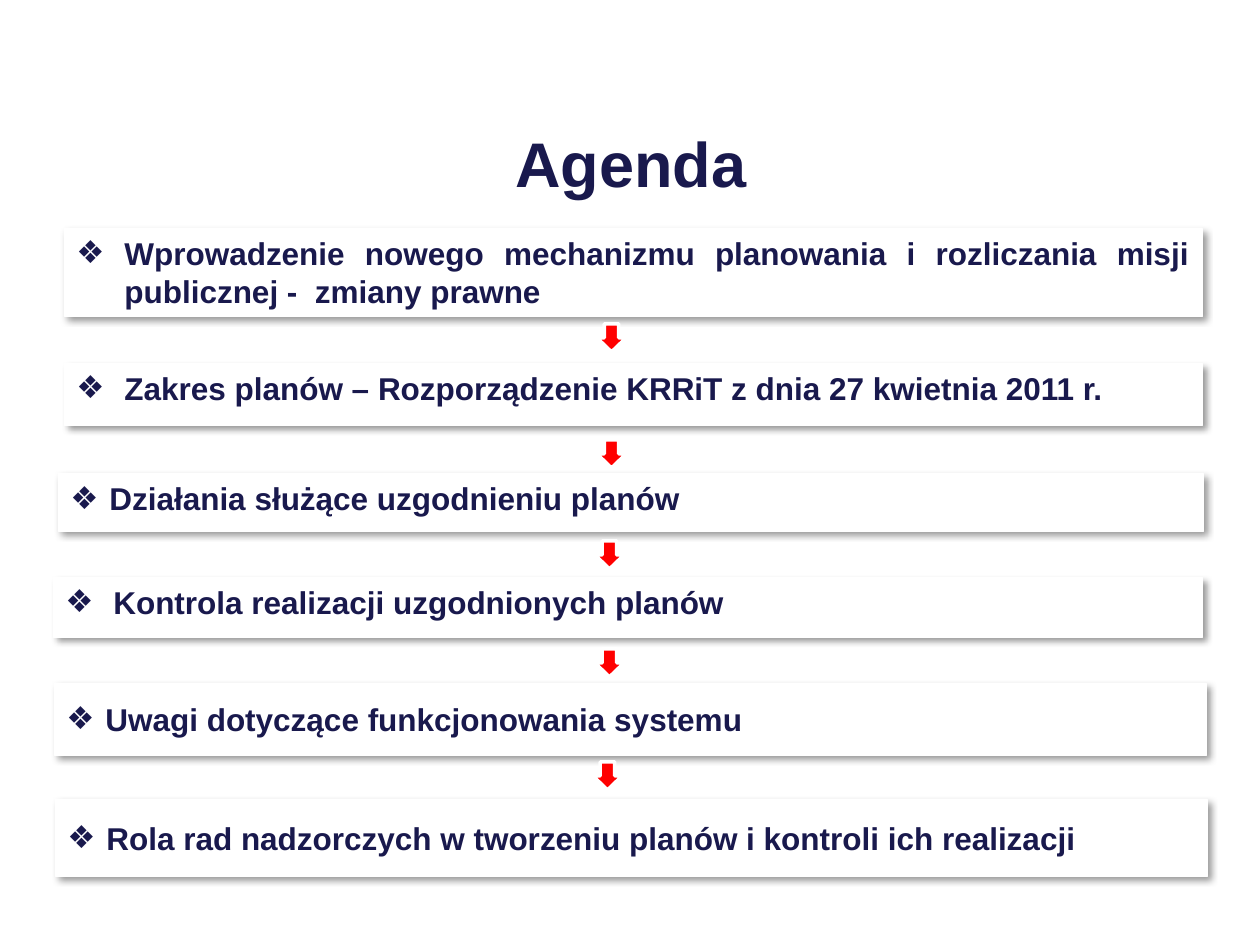
from dataclasses import dataclass

from lxml import etree
from pptx import Presentation
from pptx.dml.color import RGBColor
from pptx.enum.shapes import MSO_SHAPE
from pptx.enum.text import MSO_ANCHOR, PP_ALIGN
from pptx.oxml.ns import qn
from pptx.util import Emu, Pt

RECTANGLE, DOWN_ARROW = MSO_SHAPE.RECTANGLE, MSO_SHAPE.DOWN_ARROW
TOP, MIDDLE = MSO_ANCHOR.TOP, MSO_ANCHOR.MIDDLE
LEFT, CENTER, JUSTIFY = PP_ALIGN.LEFT, PP_ALIGN.CENTER, PP_ALIGN.JUSTIFY
EMU_PER_PX = 914400 / 126


@dataclass(frozen=True)
class Theme:
    """Colours, font and type sizes of the slide."""
    ink: RGBColor = RGBColor(0x19, 0x19, 0x4D)
    paper: RGBColor = RGBColor(0xFF, 0xFF, 0xFF)
    arrow: RGBColor = RGBColor(0xFF, 0x00, 0x00)
    shadow: str = "000000"
    font: str = "Arial"
    title_size: int = 36
    item_size: int = 18


THEME = Theme()
ARROW_SIZE = (29, 28)
AGENDA = [
    ("Wprowadzenie nowego mechanizmu planowania i rozliczania misji publicznej -  zmiany prawne",
     (64, 228, 1138, 88), 48, JUSTIFY, TOP),
    ("Zakres planów – Rozporządzenie KRRiT z dnia 27 kwietnia 2011 r.",
     (64, 363, 1138, 62), 48, JUSTIFY, TOP),
    ("Działania służące uzgodnieniu planów",
     (58, 473, 1145, 58), 39, JUSTIFY, TOP),
    ("Kontrola realizacji uzgodnionych planów",
     (53, 577, 1149, 60), 48, LEFT, TOP),
    ("Uwagi dotyczące funkcjonowania systemu",
     (54, 683, 1152, 72), 39, LEFT, MIDDLE),
    ("Rola rad nadzorczych w tworzeniu planów i kontroli ich realizacji",
     (55, 799, 1152, 77), 39, LEFT, MIDDLE),
]
ARROW_CORNERS = [(597, 324), (597, 440), (595, 541), (595, 649), (593, 762)]


def px(length):
    """Turn pixels into EMU."""
    return Emu(round(length * EMU_PER_PX))


def add_block(page, preset, box, fill, line_width=None):
    """Add a filled shape, outlined in the paper colour if a width is given."""
    block = page.shapes.add_shape(preset, *map(px, box))
    block.shadow.inherit = False
    block.fill.solid()
    block.fill.fore_color.rgb = fill
    if line_width is None:
        block.line.fill.background()
    else:
        block.line.color.rgb = THEME.paper
        block.line.width = Pt(line_width)
    return block


def write_text(block, text, size, align, anchor):
    """Write one bold paragraph into a shape and return it."""
    frame = block.text_frame
    frame.word_wrap = True
    frame.vertical_anchor = anchor
    frame.text = text
    para = frame.paragraphs[0]
    para.alignment = align
    for span in para.runs:
        span.font.name = THEME.font
        span.font.size = Pt(size)
        span.font.bold = True
        span.font.color.rgb = THEME.ink
    return para


def cast_shadow(block):
    """Give a shape a soft shadow towards the lower right."""
    effects = block._element.spPr.find(qn("a:effectLst"))
    shadow = etree.SubElement(effects, qn("a:outerShdw"), blurRad=str(Pt(4)),
                              dist=str(Pt(3)), dir=str(45 * 60000),
                              algn="tl", rotWithShape="0")
    colour = etree.SubElement(shadow, qn("a:srgbClr"), val=THEME.shadow)
    etree.SubElement(colour, qn("a:alpha"), val="40000")


def add_bullet(para, indent):
    """Give a paragraph a diamond bullet with a hanging indent."""
    properties = para._p.get_or_add_pPr()
    properties.set("marL", str(px(indent)))
    properties.set("indent", str(-px(indent)))
    etree.SubElement(properties, qn("a:buFont"), typeface=THEME.font)
    etree.SubElement(properties, qn("a:buChar"), char="❖")


def add_title(page, box, text):
    """Add the centred heading."""
    title = add_block(page, RECTANGLE, box, THEME.paper)
    write_text(title, text, THEME.title_size, CENTER, MIDDLE)


def add_item(page, box, text, indent, align, anchor):
    """Add one agenda item as a shadowed card."""
    card = add_block(page, RECTANGLE, box, THEME.paper, 0.25)
    cast_shadow(card)
    para = write_text(card, text, THEME.item_size, align, anchor)
    add_bullet(para, indent)


def build_agenda(page):
    """Place the heading, the cards and the arrows between them."""
    add_title(page, (64, 97, 1134, 131), "Agenda")
    for text, box, indent, align, anchor in AGENDA:
        add_item(page, box, text, indent, align, anchor)
    for corner in ARROW_CORNERS:
        add_block(page, DOWN_ARROW, corner + ARROW_SIZE, THEME.arrow, 2)


def main():
    """Build and save the deck."""
    deck = Presentation()
    deck.slide_width, deck.slide_height = px(1260), px(945)
    build_agenda(deck.slides.add_slide(deck.slide_layouts[6]))
    deck.save("out.pptx")


if __name__ == "__main__":
    main()
